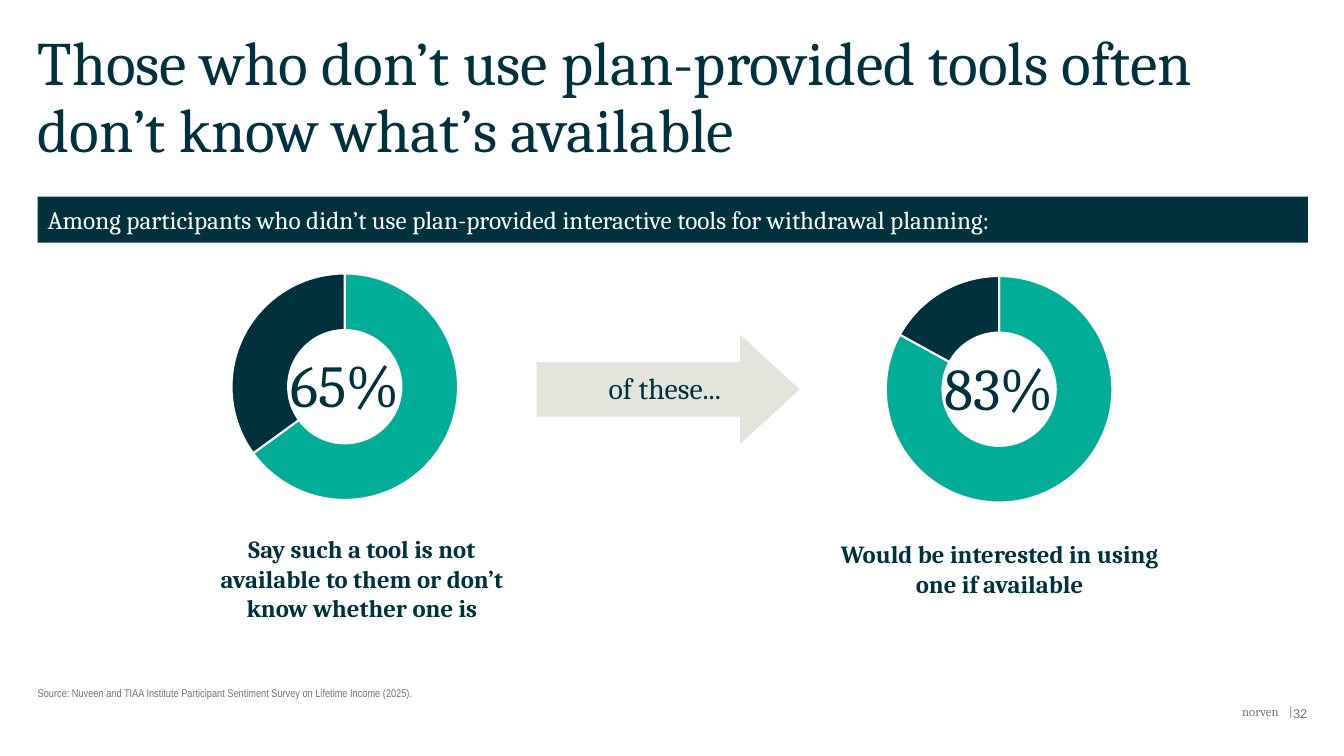
from lxml import etree
from pptx import Presentation, util as u
from pptx.chart.data import CategoryChartData
from pptx.dml.color import RGBColor
from pptx.enum import chart as ch, shapes, text
from pptx.oxml import parse_xml
from pptx.oxml.ns import nsdecls, qn

NAVY = RGBColor(0x00, 0x31, 0x3C)
TEAL = RGBColor(0x00, 0xAD, 0x97)
SAND = RGBColor(0xE3, 0xE5, 0xDC)
GRAY = RGBColor(0x74, 0x74, 0x76)
WHITE = RGBColor(0xFF, 0xFF, 0xFF)

WIDE, HIGH = u.Inches(13.33), u.Inches(7.5)
COLS, ROWS = 160, 90
LEFT, SPAN = 4.5, 151.2
LEFT_AL, MID, RIGHT = text.PP_ALIGN.LEFT, text.PP_ALIGN.CENTER, text.PP_ALIGN.RIGHT
TOP, CORE, BASE = text.MSO_ANCHOR.TOP, text.MSO_ANCHOR.MIDDLE, text.MSO_ANCHOR.BOTTOM
SERIF = "Cambria"


def place(col, row, cols, rows):
    wide, high = WIDE / COLS, HIGH / ROWS
    return [round(n) for n in (col * wide, row * high, cols * wide, rows * high)]


def apply(item, style):
    for name, value in style.items():
        setattr(item, name, value)


def write(shape, words, size, color=NAVY, face=SERIF, bold=False,
          align=LEFT_AL, anchor=TOP, pad=(0, 0), line=1.0):
    frame = shape.text_frame
    side, edge = (u.Inches(n) for n in pad)
    apply(frame, {"word_wrap": True, "vertical_anchor": anchor,
                  "margin_left": side, "margin_right": side,
                  "margin_top": edge, "margin_bottom": edge})
    para = frame.paragraphs[0]
    apply(para, {"alignment": align, "line_spacing": line})
    run = para.add_run()
    run.text = words
    apply(run.font, {"name": face, "size": u.Pt(size), "bold": bold})
    run.font.color.rgb = color


def label(slide, spot, words, size, **style):
    write(slide.shapes.add_textbox(*place(*spot)), words, size, **style)


def block(slide, kind, spot, color):
    shape = slide.shapes.add_shape(kind, *place(*spot))
    shape.shadow.inherit = False
    shape.fill.solid()
    shape.fill.fore_color.rgb = color
    shape.line.fill.background()
    return shape


def center(chart, wide, high):
    area = chart._chartSpace.chart.plotArea
    for old in area.findall(qn("c:layout")):
        area.remove(old)
    box = parse_xml(f"<c:layout {nsdecls('c')}><c:manualLayout/></c:layout>")
    parts = {"layoutTarget": "inner", "xMode": "edge", "yMode": "edge",
             "x": (1 - wide) / 2, "y": (1 - high) / 2, "w": wide, "h": high}
    for name, value in parts.items():
        etree.SubElement(box[0], qn(f"c:{name}")).set("val", str(value))
    area.insert(0, box)
    area.find(".//" + qn("c:holeSize")).set("val", "70")


def donut(slide, col, row, share):
    data = CategoryChartData()
    data.categories = ["1", "2"]
    data.add_series("Series 1", (share, 100 - share))
    chart = slide.shapes.add_chart(
        ch.XL_CHART_TYPE.DOUGHNUT, *place(col, row, 35.5, 30.5), data).chart
    apply(chart, {"has_legend": False, "has_title": False})
    apply(chart.font, {"name": SERIF, "size": u.Pt(10)})
    chart.font.color.rgb = NAVY
    center(chart, 0.76, 0.886)
    for spot, color in enumerate((TEAL, NAVY)):
        form = chart.plots[0].series[0].points[spot].format
        form.fill.solid()
        form.fill.fore_color.rgb = color
        form.line.color.rgb = WHITE
        form.line.width = u.Pt(1.5)
    label(slide, (col + 9.05, row + 10.1, 17.4, 9.7), f"{share}%", 42.4,
          align=MID, pad=(0.1, 0.05))


def arrow(slide):
    shape = block(slide, shapes.MSO_SHAPE.RIGHT_ARROW, (63.9, 39.85, 31.3, 13), SAND)
    shape.adjustments[1] = 0.545
    label(slide, (68.4, 43.45, 21.5, 5.5), "of these...", 21.2,
          align=MID, pad=(0.1, 0.05))


def main():
    deck = Presentation()
    apply(deck, {"slide_width": WIDE, "slide_height": HIGH})
    slide = deck.slides.add_slide(deck.slide_layouts[6])

    label(slide, (LEFT, 3.85, SPAN, 16.1),
          "Those who don’t use plan-provided tools often don’t know what’s available",
          44, line=0.9)
    band = block(slide, shapes.MSO_SHAPE.RECTANGLE, (LEFT, 23.4, SPAN, 5.5), NAVY)
    write(band, "Among participants who didn’t use plan-provided interactive "
          "tools for withdrawal planning:", 18, color=WHITE, anchor=CORE, pad=(0.1, 0.1))

    donut(slide, 23.3, 30.8, 65)
    arrow(slide)
    donut(slide, 101.2, 31.1, 83)
    notes = (
        ((22.4, 63, 41.4, 11.9),
         "Say such a tool is not available to them or don’t know whether one is"),
        ((98.3, 63.6, 41.4, 8.4), "Would be interested in using one if available"),
    )
    for spot, words in notes:
        label(slide, spot, words, 17.6, bold=True, align=MID, pad=(0.1, 0.05))

    label(slide, (LEFT, 78.5, SPAN, 4.8),
          "Source: Nuveen and TIAA Institute Participant Sentiment Survey on "
          "Lifetime Income (2025).", 8, color=GRAY, face="Arial Narrow", anchor=BASE)
    foot = (((142.9, 83.8, 9.3, 2.4), "norven", SERIF),
            ((152.4, 83.8, 1.5, 2.4), "|", SERIF),
            ((151.5, 84, 4.1, 4.8), "32", "Arial"))
    for spot, words, face in foot:
        label(slide, spot, words, 9, color=GRAY, face=face, align=RIGHT)
    deck.save("out.pptx")


if __name__ == "__main__":
    main()
